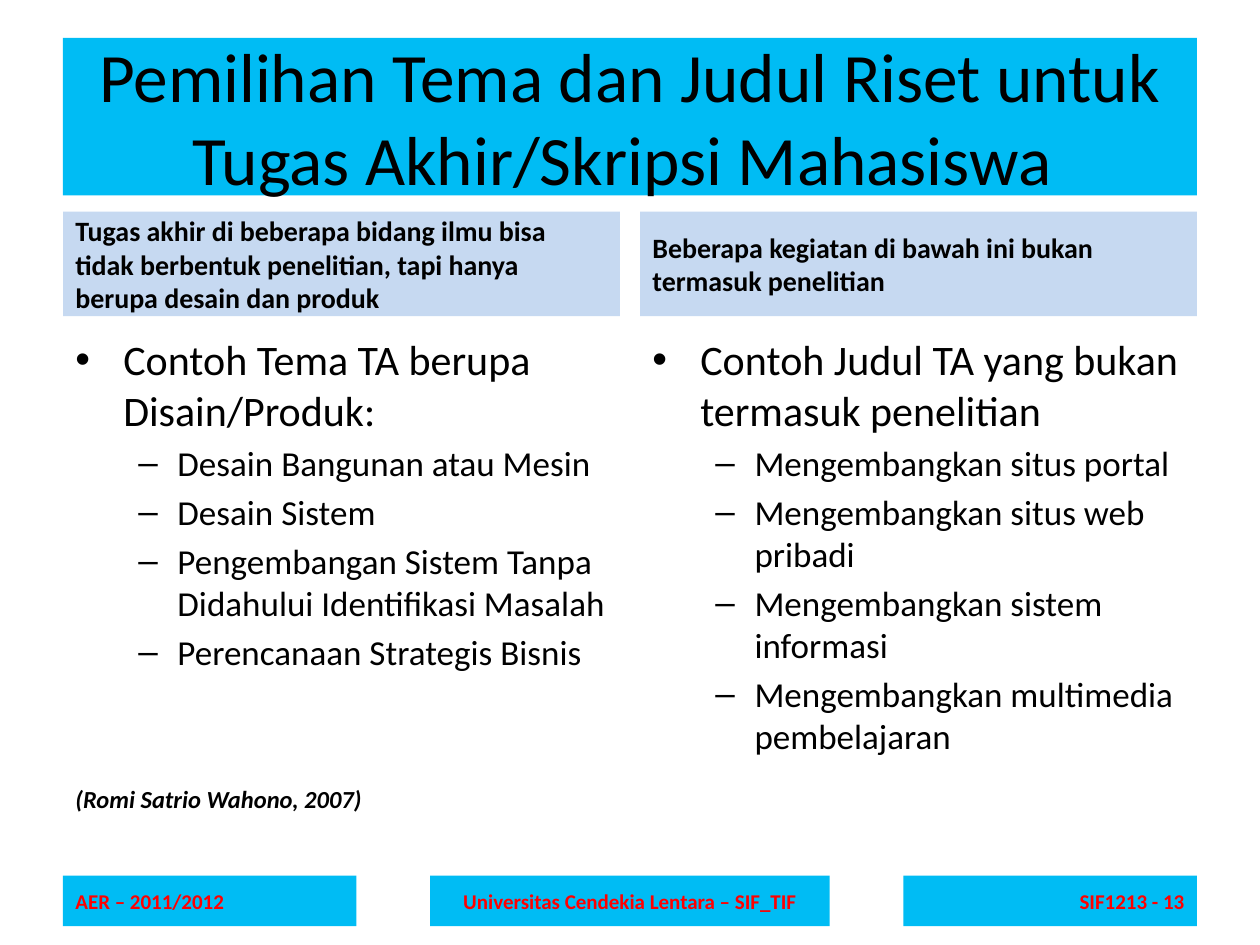
from lxml.etree import SubElement
from pptx import Presentation
from pptx.dml.color import RGBColor
from pptx.enum.shapes import MSO_SHAPE
from pptx.enum.text import MSO_ANCHOR, PP_ALIGN
from pptx.oxml.ns import qn
from pptx.util import Inches, Pt

HUES = {"cyan": "00BCF4", "pale": "C6D9F1", "ink": "000000", "red": "FF0000"}
FONT = "Calibri"
LEVELS = [
    {"mark": "•", "size": 24, "left": 0.38, "hang": 0.38},
    {"mark": "–", "size": 20, "left": 0.81, "hang": 0.31},
]


def style(item, values):
    for name, value in values.items():
        setattr(item, name, value)


def write(para, text, size, hue="ink", **extra):
    run = para.add_run()
    run.text = text
    style(run.font, {"name": FONT, "size": Pt(size), **extra})
    run.font.color.rgb = RGBColor.from_string(HUES[hue])


def add_panel(slide, box, fill, text, size, align=PP_ALIGN.LEFT, **look):
    panel = slide.shapes.add_shape(MSO_SHAPE.RECTANGLE, *map(Inches, box))
    panel.shadow.inherit = False
    panel.fill.solid()
    panel.fill.fore_color.rgb = RGBColor.from_string(HUES[fill])
    panel.line.fill.background()
    frame = panel.text_frame
    style(frame, {"word_wrap": True, "vertical_anchor": MSO_ANCHOR.MIDDLE})
    para = frame.paragraphs[0]
    para.alignment = align
    write(para, text, size, **look)


def add_bullet(para, level):
    rule = LEVELS[level]
    para.level = level
    props = para._p.get_or_add_pPr()
    props.set("marL", str(Inches(rule["left"])))
    props.set("indent", str(-Inches(rule["hang"])))
    SubElement(props, qn("a:buFont"), typeface="Arial")
    SubElement(props, qn("a:buChar"), char=rule["mark"])


def add_list(slide, box, lead, items):
    frame = slide.shapes.add_textbox(*map(Inches, box)).text_frame
    frame.word_wrap = True
    for place, text in enumerate([lead, *items]):
        level = min(place, 1)
        size = LEVELS[level]["size"]
        para = frame.add_paragraph() if place else frame.paragraphs[0]
        para.space_before = Pt(size * 0.2 * level)
        add_bullet(para, level)
        write(para, text, size)


def add_column(slide, box, head, lead, items):
    left, top, width, height = box
    add_panel(slide, (left, top, width, 0.83), "pale", head, 16, bold=True)
    add_list(slide, (left, top + 0.92, width, height - 0.92), lead, items)


def add_footer(slide, box, parts):
    left, top, width, height = box
    for text, shift, span, align in parts:
        add_panel(slide, (left + shift * (width - span), top, span, height),
                  "cyan", text, 12, align, hue="red", bold=True)


def add_credit(slide, box, text):
    frame = slide.shapes.add_textbox(*map(Inches, box)).text_frame
    frame.word_wrap = False
    write(frame.paragraphs[0], text, 14, bold=True, italic=True)


def main():
    deck = Presentation()
    style(deck, {"slide_width": Inches(10), "slide_height": Inches(7.5)})
    slide = deck.slides.add_slide(deck.slide_layouts[6])
    add_panel(slide, (0.5, 0.3, 9, 1.25), "cyan",
              "Pemilihan Tema dan Judul Riset untuk Tugas Akhir/Skripsi Mahasiswa ",
              39.6, PP_ALIGN.CENTER)
    columns = [
        ("Tugas akhir di beberapa bidang ilmu bisa tidak berbentuk penelitian, "
         "tapi hanya berupa desain dan produk",
         "Contoh Tema TA berupa Disain/Produk:",
         ["Desain Bangunan atau Mesin", "Desain Sistem",
          "Pengembangan Sistem Tanpa Didahului Identifikasi Masalah",
          "Perencanaan Strategis Bisnis"]),
        ("Beberapa kegiatan di bawah ini bukan termasuk penelitian",
         "Contoh Judul TA yang bukan termasuk penelitian",
         ["Mengembangkan situs portal", "Mengembangkan situs web pribadi",
          "Mengembangkan sistem informasi",
          "Mengembangkan multimedia pembelajaran"]),
    ]
    for place, column in enumerate(columns):
        add_column(slide, (0.5 + place * 4.58, 1.68, 4.42, 5.24), *column)
    add_footer(slide, (0.5, 6.95, 9, 0.4), [
        ("AER – 2011/2012", 0, 2.33, PP_ALIGN.LEFT),
        ("Universitas Cendekia Lentara – SIF_TIF", 0.5, 3.17, PP_ALIGN.CENTER),
        ("SIF1213 - 13", 1, 2.33, PP_ALIGN.RIGHT),
    ])
    add_credit(slide, (0.5, 6.17, 2.49, 0.34), "(Romi Satrio Wahono, 2007)")
    deck.save("out.pptx")


if __name__ == "__main__":
    main()
